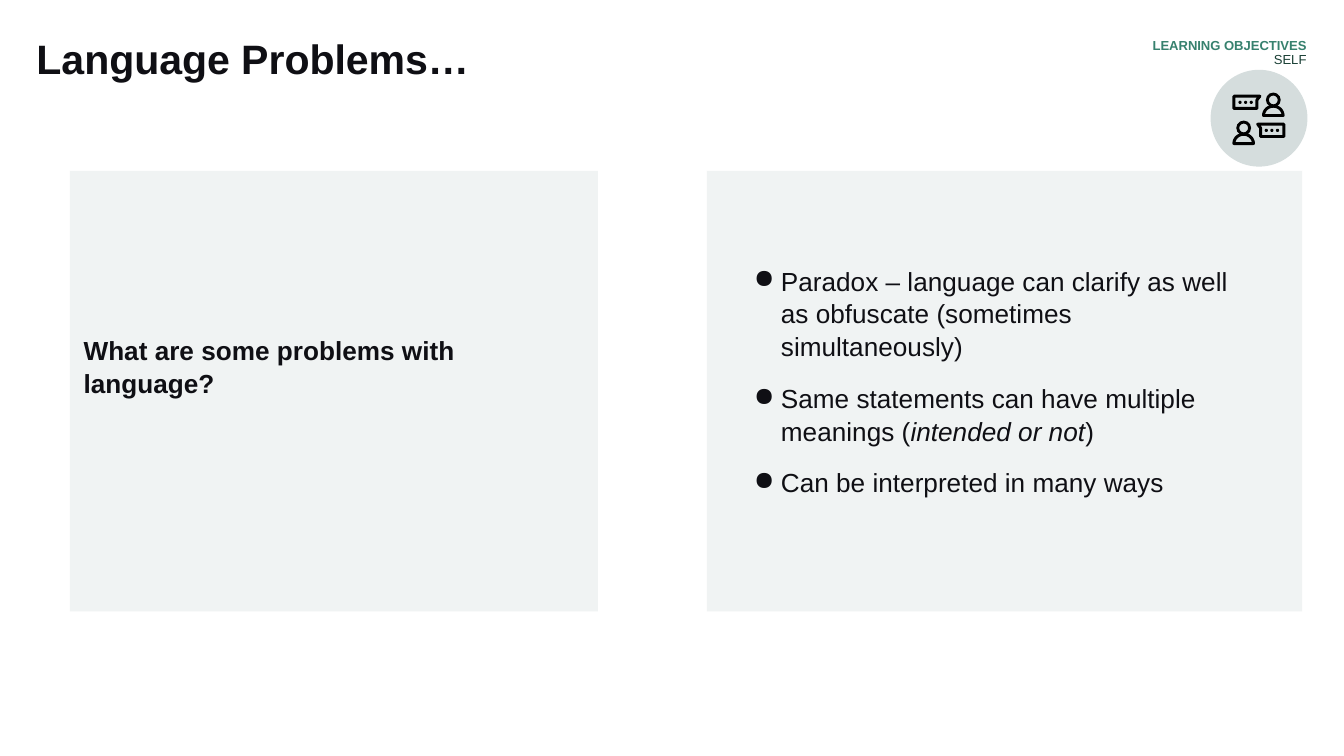
from math import cos, pi, sin

from lxml import etree
from pptx import Presentation
from pptx import util as u
from pptx.dml.color import RGBColor
from pptx.enum import shapes, text
from pptx.oxml import ns

COLORS = {"ink": "0F0F14", "panel": "F0F3F3", "accent": "37816E",
          "deep": "1B4036", "disc": "D5DDDD", "icon": "000000"}
FONT = "Arial"


def color(name):
    """Return the named colour."""
    return RGBColor.from_string(COLORS[name])


def set_font(target, size, name="ink", bold=False):
    """Style the font of a paragraph or run."""
    f = target.font
    f.name, f.size, f.bold = FONT, u.Pt(size), bold
    f.color.rgb = color(name)


def add_text(parent, box, top=0.25, right=0.25):
    """Add a wrapping text box and return its text frame."""
    tf = parent.add_textbox(*map(u.Cm, box)).text_frame
    tf.word_wrap = True
    tf.vertical_anchor = text.MSO_ANCHOR.TOP
    tf.margin_left, tf.margin_bottom = 0, u.Cm(0.25)
    tf.margin_top, tf.margin_right = u.Cm(top), u.Cm(right)
    return tf


def add_fill(parent, kind, box, name):
    """Add a flat preset shape without an outline."""
    sp = parent.add_shape(kind, *map(u.Cm, box))
    sp.shadow.inherit = False
    sp.fill.solid()
    sp.fill.fore_color.rgb = color(name)
    sp.line.fill.background()
    return sp


def add_outline(parent, box, points):
    """Draw a closed black outline from points given as fractions of the box."""
    x, y, w, h = box
    pts = [(u.Cm(x + w * px), u.Cm(y + h * py)) for px, py in points]
    fb = parent.build_freeform(*pts[0])
    fb.add_line_segments(pts[1:], close=True)
    sp = fb.convert_to_shape()
    sp.shadow.inherit = False
    sp.fill.background()
    sp.line.color.rgb = color("icon")
    sp.line.width = u.Pt(1.6)


def add_person(parent, box):
    """Draw a head ring above a rounded pair of shoulders."""
    x, y, w, h = box
    d = 0.65 * w
    head = add_fill(parent, shapes.MSO_SHAPE.DONUT, (x + (w - d) / 2, y, d, d), "icon")
    head.adjustments[0] = 0.2
    arc = [(0.5 - 0.43 * cos(pi * i / 16), 0.94 - 0.38 * sin(pi * i / 16))
           for i in range(17)]
    add_outline(parent, box, arc)


def add_bubble(parent, box, flip=False):
    """Draw a speech bubble with three dots, its tail at the left unless flipped."""
    x, y, w, h = box
    outline = [(0.07, 0.1), (0.17, 0.35), (0.17, 0.9), (0.95, 0.9), (0.95, 0.1)]
    add_outline(parent, box, [(1 - px if flip else px, py) for px, py in outline])
    d = 0.06
    for i in range(3):
        px = 0.36 + 0.19 * i
        cx = x + w * (1 - px if flip else px)
        add_fill(parent, shapes.MSO_SHAPE.OVAL, (cx - d / 2, y + (h - d) / 2, d, d), "icon")


def add_icon(s, box):
    """Place two people in conversation on a disc."""
    x, y, w, h = box
    g = s.shapes.add_group_shape().shapes
    add_fill(g, shapes.MSO_SHAPE.OVAL, box, "disc")
    add_person(g, (x + 0.41, y + 0.96, 0.43, 0.46))
    add_bubble(g, (x + 0.85, y + 1, 0.56, 0.29))
    add_person(g, (x + 0.97, y + 0.43, 0.43, 0.46))
    add_bubble(g, (x + 0.41, y + 0.47, 0.56, 0.29), flip=True)


def add_title(s, box):
    """Place the slide title."""
    p = add_text(s.shapes, box, top=0).paragraphs[0]
    p.text = "Language Problems…"
    p.line_spacing = 0.9
    set_font(p, 22, bold=True)


def add_label(s, box):
    """Place the right-aligned section label."""
    p = add_text(s.shapes, box, top=0, right=0).paragraphs[0]
    p.alignment = text.PP_ALIGN.RIGHT
    p.line_spacing = 0.9
    r = p.add_run()
    r.text = "LEARNING OBJECTIVES"
    set_font(r, 7, "accent", bold=True)
    p.add_line_break()
    r = p.add_run()
    r.text = "SELF"
    set_font(r, 7, "deep")


def add_question(s, box):
    """Place the question panel."""
    x, y, w, h = box
    add_fill(s.shapes, shapes.MSO_SHAPE.RECTANGLE, box, "panel")
    p = add_text(s.shapes, (x + 0.26, y + 2.82, 9.45, 1.96)).paragraphs[0]
    p.text = "What are some problems with language?"
    p.line_spacing = 1.05
    set_font(p, 14, bold=True)


def add_bullet(p):
    """Give a paragraph a hanging round bullet."""
    pPr = p._p.get_or_add_pPr()
    pPr.set("marL", str(u.Cm(0.51)))
    pPr.set("indent", str(-u.Cm(0.51)))
    clr = etree.SubElement(pPr, ns.qn("a:buClr"))
    etree.SubElement(clr, ns.qn("a:srgbClr")).set("val", COLORS["ink"])
    etree.SubElement(pPr, ns.qn("a:buChar")).set("char", "●")


def add_answers(s, box):
    """Place the panel of bulleted answers."""
    x, y, w, h = box
    add_fill(s.shapes, shapes.MSO_SHAPE.RECTANGLE, box, "panel")
    tf = add_text(s.shapes, (x + 0.89, y + 1.5, 9.45, 6.12))
    answers = [
        [("Paradox – language can clarify as well as obfuscate (sometimes simultaneously)", False)],
        [("Same statements can have multiple meanings (", False),
         ("intended or not", True), (")", False)],
        [("Can be interpreted in many ways", False)],
    ]
    for i, runs in enumerate(answers):
        p = tf.add_paragraph() if i else tf.paragraphs[0]
        add_bullet(p)
        p.line_spacing = 1.05
        p.space_before = u.Pt(10 if i else 0)
        set_font(p, 14)
        for words, italic in runs:
            r = p.add_run()
            r.text = words
            if italic:
                r.font.italic = True


def main():
    """Build the slide and save it."""
    prs = Presentation()
    prs.slide_width, prs.slide_height = u.Cm(25.4), u.Cm(14.29)
    s = prs.slides.add_slide(prs.slide_layouts[6])
    add_title(s, (0.69, 0.74, 20.29, 1.5))
    add_answers(s, (13.36, 3.23, 11.25, 8.33))
    add_question(s, (1.32, 3.23, 9.98, 8.33))
    add_label(s, (16.89, 0.74, 7.8, 0.91))
    add_icon(s, (22.88, 1.32, 1.83, 1.83))
    prs.save("out.pptx")


if __name__ == "__main__":
    main()
